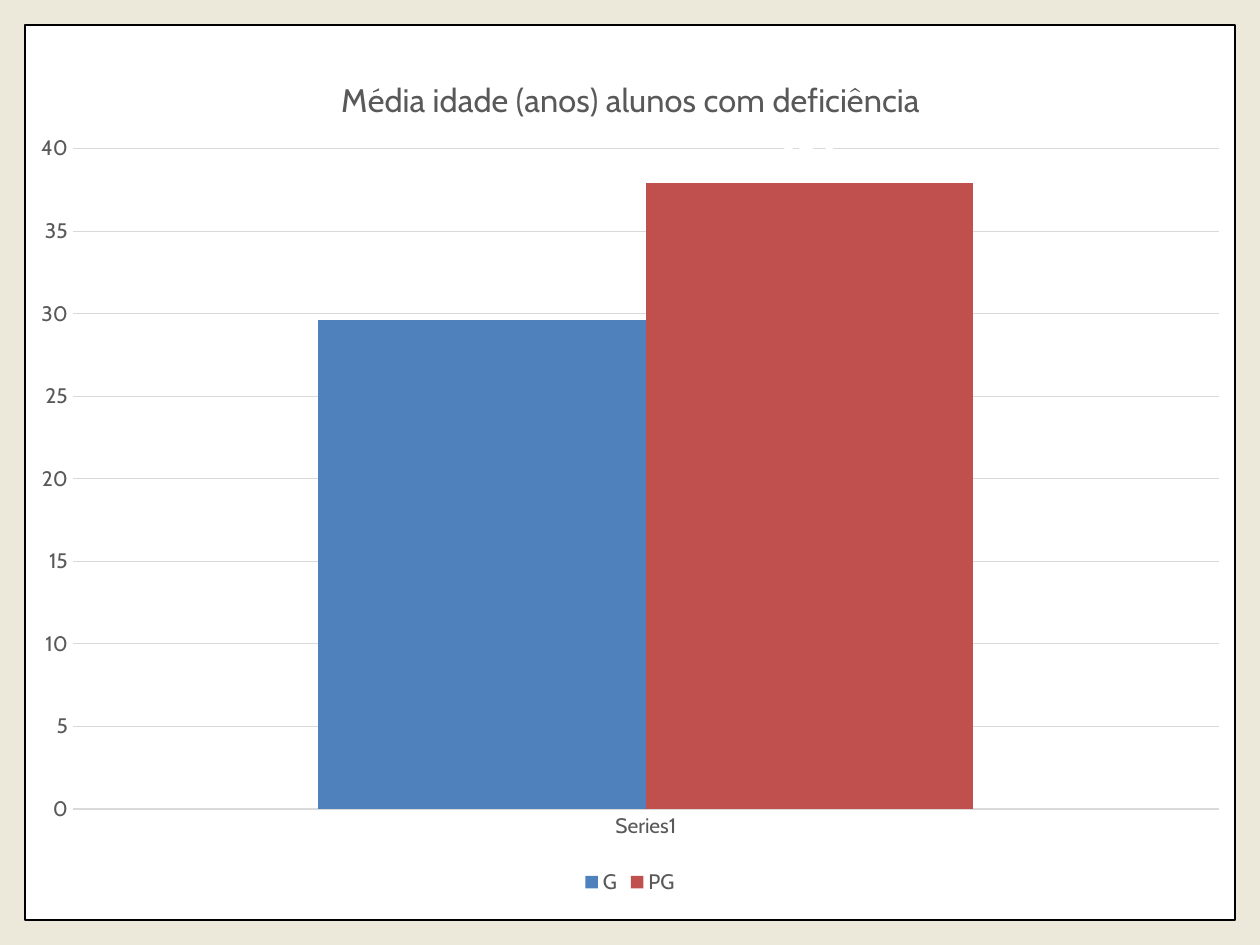
from dataclasses import dataclass
from typing import Any

from lxml.etree import SubElement
from pptx import Presentation
from pptx.chart.data import CategoryChartData
from pptx.dml.color import RGBColor
from pptx.enum.chart import XL_CHART_TYPE as ChartType
from pptx.enum.chart import XL_LABEL_POSITION as LabelPosition
from pptx.enum.chart import XL_LEGEND_POSITION as LegendPosition
from pptx.enum.chart import XL_TICK_MARK as TickMark
from pptx.enum.shapes import MSO_SHAPE as ShapeType
from pptx.oxml.ns import qn
from pptx.util import Inches, Pt

COLORS = {
    "background": "ECE9DB", "panel": "FFFFFF", "border": "000000",
    "text": "595959", "grid": "D9D9D9", "label": "FFFFFF",
    "G": "4F81BD", "PG": "C0504D",
}
FONT = "Cabin"
WIDTH, HEIGHT = 10, 7.5
MARGIN = 0.2


@dataclass(frozen=True)
class AgeSeries:
    name: str
    mean_age: float


SERIES = [AgeSeries("G", 29.6), AgeSeries("PG", 37.9)]


def color(name: str) -> RGBColor:
    return RGBColor.from_string(COLORS[name])


def format_font(font: Any, size: float = 12, color_name: str = "text") -> None:
    font.name = FONT
    font.size = Pt(size)
    font.bold = False
    font.color.rgb = color(color_name)


def write_text(frame: Any, text: str, **font_format: Any) -> None:
    run = frame.paragraphs[0].add_run()
    run.text = text
    format_font(run.font, **font_format)


def place_part(element: Any, index: int, inner: bool = False, **shares: float) -> None:
    """Fix a chart part at x, y, w, h, given as shares of the chart's size."""
    for old_layout in element.findall(qn("c:layout")):
        element.remove(old_layout)
    layout = SubElement(element, qn("c:layout"))
    element.insert(index, layout)
    manual = SubElement(layout, qn("c:manualLayout"))
    if inner:
        SubElement(manual, qn("c:layoutTarget")).set("val", "inner")
    for key in ("x", "y"):
        SubElement(manual, qn(f"c:{key}Mode")).set("val", "edge")
    for key, share in shares.items():
        SubElement(manual, qn(f"c:{key}")).set("val", str(share))


def format_axis(axis: Any) -> None:
    axis.major_tick_mark = axis.minor_tick_mark = TickMark.NONE
    axis.format.line.fill.background()
    format_font(axis.tick_labels.font)


def add_panel(slide: Any) -> None:
    panel = slide.shapes.add_shape(
        ShapeType.RECTANGLE, Inches(MARGIN), Inches(MARGIN),
        Inches(WIDTH - 2 * MARGIN), Inches(HEIGHT - 2 * MARGIN))
    panel.shadow.inherit = False
    panel.fill.solid()
    panel.fill.fore_color.rgb = color("panel")
    panel.line.color.rgb = color("border")
    panel.line.width = Pt(1)


def add_age_chart(slide: Any) -> None:
    data = CategoryChartData(number_format="General")
    data.categories = ["Series1"]
    for series in SERIES:
        data.add_series(series.name, [series.mean_age])
    chart = slide.shapes.add_chart(
        ChartType.COLUMN_CLUSTERED, Inches(0.13), Inches(0.29),
        Inches(9.74), Inches(6.85), data).chart
    format_font(chart.font, size=10, color_name="border")

    # Title
    chart.has_title = True
    write_text(chart.chart_title.text_frame,
               "Média idade (anos) alunos com deficiência", size=18.6)
    chart.chart_title.include_in_layout = False
    title = chart._chartSpace.chart.find(qn("c:title"))
    place_part(title, 1, x=0.26, y=0.04)

    # Axes and gridlines
    format_axis(chart.category_axis)
    value_axis = chart.value_axis
    format_axis(value_axis)
    value_axis.minimum_scale, value_axis.maximum_scale = 0, 40
    value_axis.major_unit = 5
    grid_line = value_axis.major_gridlines.format.line
    grid_line.color.rgb = color("grid")
    grid_line.width = Pt(0.75)

    # Columns and value labels
    plot = chart.plots[0]
    plot.gap_width, plot.overlap = 150, 0
    plot.vary_by_categories = False
    for series in plot.series:
        series.format.fill.solid()
        series.format.fill.fore_color.rgb = color(series.name)
        labels = series.data_labels
        labels.show_value = True
        labels.position = LabelPosition.OUTSIDE_END
        format_font(labels.font, size=18, color_name="label")
    place_part(chart._chartSpace.chart.plotArea, 0, inner=True,
               x=0.046, y=0.13, w=0.934, h=0.765)

    # Legend
    chart.has_legend = True
    chart.legend.position = LegendPosition.BOTTOM
    chart.legend.include_in_layout = False
    format_font(chart.legend.font)


def main() -> None:
    presentation = Presentation()
    presentation.slide_width = Inches(WIDTH)
    presentation.slide_height = Inches(HEIGHT)
    slide = presentation.slides.add_slide(presentation.slide_layouts[6])
    slide.background.fill.solid()
    slide.background.fill.fore_color.rgb = color("background")
    add_panel(slide)
    add_age_chart(slide)
    presentation.save("out.pptx")


if __name__ == "__main__":
    main()
